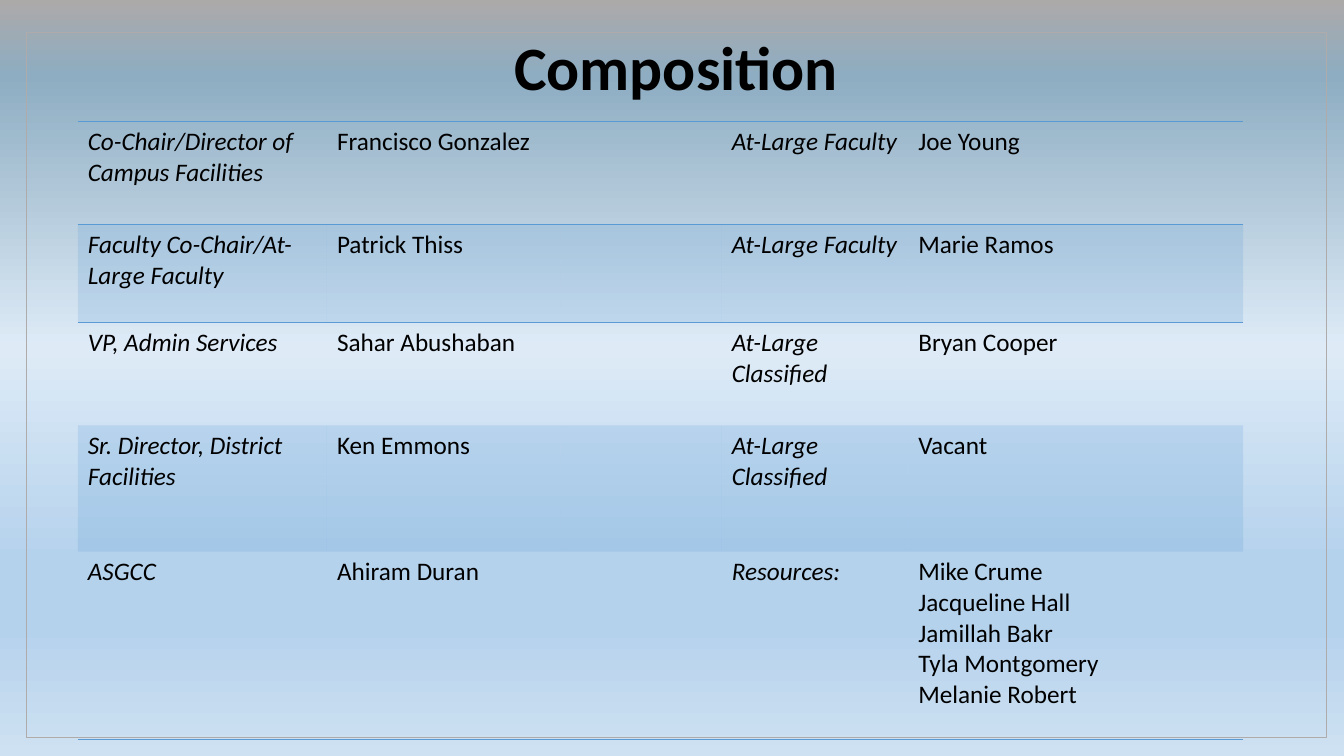
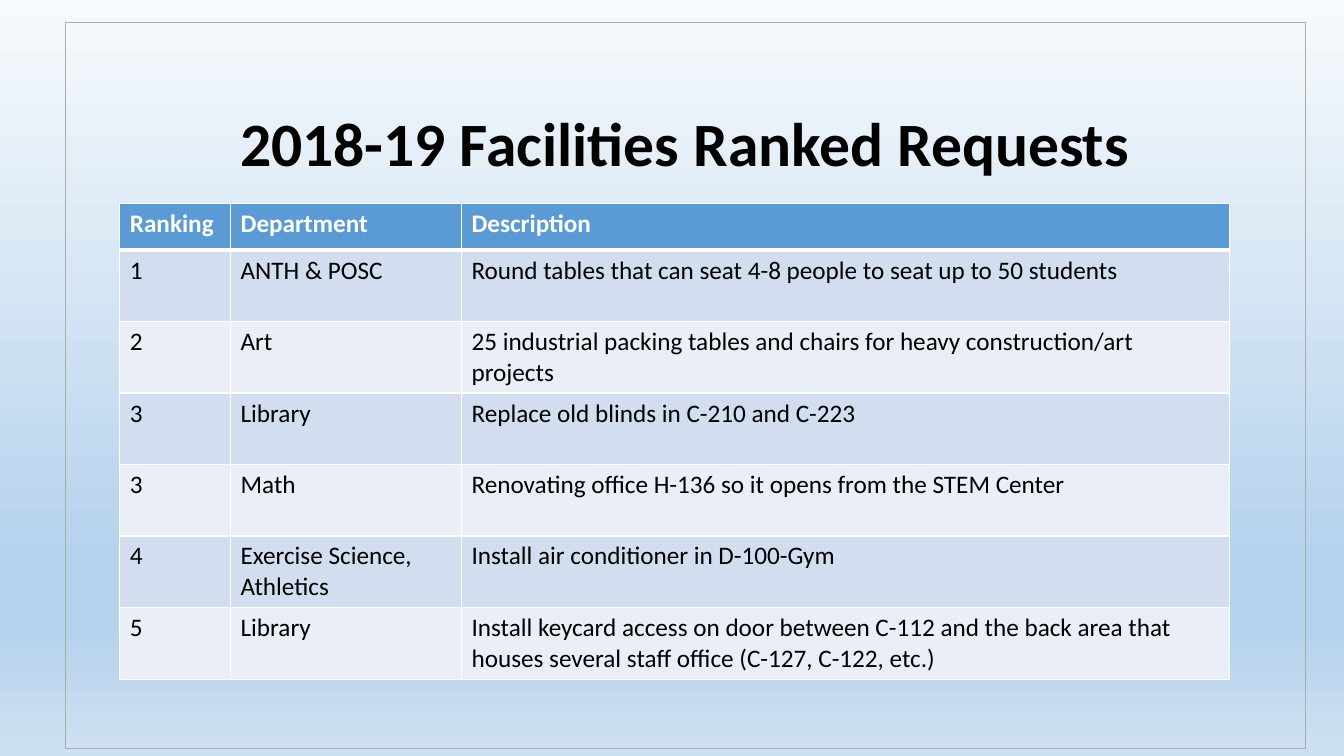
from dataclasses import dataclass

from lxml import etree
from pptx import Presentation
from pptx import util as u
from pptx.dml.color import RGBColor
from pptx.enum import text
from pptx.oxml import ns


@dataclass(frozen=True)
class Theme:
    font: str = "Calibri"
    title_size: int = 44
    body_size: int = 18
    ink: str = "000000"
    white: str = "FFFFFF"
    frame: str = "AFABAB"
    accent: str = "5B9BD5"
    band_dark: str = "D2DEEF"
    band_light: str = "EAEFF7"
    sky: tuple = ((74, "B5D2EC"), (83, "B5D2EC"), (100, "CEE1F2"))
    dusk: tuple = ((0, "ACA9A9"), (10, "8EADC2"), (46, "DEEBF7"))
    dawn: tuple = ((0, "F7FAFD"),)
    no_table_style: str = "{2D5ABB26-0587-4C30-8999-92F81FD0307C}"


THEME = Theme()

MEMBERS = [
    ["Co-Chair/Director of Campus Facilities", "Francisco Gonzalez", "",
     "At-Large Faculty", "Joe Young"],
    ["Faculty Co-Chair/At-Large Faculty", "Patrick Thiss", "",
     "At-Large Faculty", "Marie Ramos"],
    ["VP, Admin Services", "Sahar Abushaban", "",
     "At-Large\nClassified", "Bryan Cooper"],
    ["Sr. Director, District Facilities", "Ken Emmons", "",
     "At-Large\nClassified", "Vacant"],
    ["ASGCC", "Ahiram Duran", "", "Resources:",
     "Mike Crume\nJacqueline Hall\nJamillah Bakr\nTyla Montgomery\nMelanie Robert"],
]

REQUESTS = [
    ["Ranking", "Department", "Description"],
    ["1", "ANTH & POSC",
     "Round tables that can seat 4-8 people to seat up to 50 students"],
    ["2", "Art",
     "25 industrial packing tables and chairs for heavy construction/art projects"],
    ["3", "Library", "Replace old blinds in C-210 and C-223"],
    ["3", "Math", "Renovating office H-136 so it opens from the STEM Center"],
    ["4", "Exercise Science, Athletics", "Install air conditioner in D-100-Gym"],
    ["5", "Library",
     "Install keycard access on door between C-112 and the back area that "
     "houses several staff office (C-127, C-122, etc.)"],
]


def add_xml(parent, tag, **attributes):
    return etree.SubElement(parent, ns.qn(tag), attributes)


class Pages:
    def __init__(self, theme):
        self.theme = theme
        self.deck = Presentation()
        self.deck.slide_width = u.Cm(33.87)
        self.deck.slide_height = u.Cm(19.05)
        self.page = None

    def add_page(self, top_stops):
        self.page = self.deck.slides.add_slide(self.deck.slide_layouts[5])
        fill = self.page.background.fill
        fill.gradient()
        fill.gradient_angle = 270
        stop_list = self.page.element.xpath(".//p:bg//a:gsLst")[0]
        for stop in list(stop_list):
            stop_list.remove(stop)
        for percent, color in top_stops + self.theme.sky:
            stop = add_xml(stop_list, "a:gs", pos=str(percent * 1000))
            add_xml(stop, "a:srgbClr", val=color)

    def style(self, para, size, color, bold=False, italic=False):
        font = para.font
        font.name, font.size = self.theme.font, u.Pt(size)
        font.bold, font.italic = bold, italic
        font.color.rgb = RGBColor.from_string(color)

    def add_title(self, words, left, top, width, height, inset=0.13):
        box = self.page.shapes.title
        box.left, box.top = u.Cm(left), u.Cm(top)
        box.width, box.height = u.Cm(width), u.Cm(height)
        box.line.color.rgb = RGBColor.from_string(self.theme.frame)
        box.line.width = u.Pt(0.75)
        frame = box.text_frame
        frame.text = words
        frame.word_wrap = True
        frame.auto_size = text.MSO_AUTO_SIZE.NONE
        frame.vertical_anchor = text.MSO_ANCHOR.TOP
        frame.margin_top = u.Cm(inset)
        para = frame.paragraphs[0]
        para.alignment = text.PP_ALIGN.CENTER
        para.line_spacing = 0.9
        self.style(para, self.theme.title_size, self.theme.ink, bold=True)

    def add_table(self, rows, left, top, widths, heights):
        frame = self.page.shapes.add_table(
            len(rows), len(widths), u.Cm(left), u.Cm(top),
            u.Cm(sum(widths)), u.Cm(sum(heights)))
        table = frame.table
        table.first_row = table.horz_banding = False
        frame.element.xpath(".//a:tableStyleId")[0].text = self.theme.no_table_style
        for column, width in zip(table.columns, widths):
            column.width = u.Cm(width)
        for row, height, words in zip(table.rows, heights, rows):
            row.height = u.Cm(height)
            for cell, label in zip(row.cells, words):
                cell.text = label
        return table

    def set_borders(self, cell, color, **widths):
        properties = cell._tc.get_or_add_tcPr()
        for side in "LRTB":
            width = widths.get(side, 0)
            if width:
                line = add_xml(properties, f"a:ln{side}", w=str(u.Pt(width)))
                add_xml(add_xml(line, "a:solidFill"), "a:srgbClr", val=color)

    def set_fill(self, cell, color, opacity=100):
        cell.fill.solid()
        cell.fill.fore_color.rgb = RGBColor.from_string(color)
        if opacity < 100:
            tint = cell._tc.tcPr.xpath("./a:solidFill/a:srgbClr")[0]
            add_xml(tint, "a:alpha", val=str(opacity * 1000))

    def add_member_table(self, rows, left, top, widths, heights):
        theme = self.theme
        table = self.add_table(rows, left, top, widths, heights)
        rules = [1, 1, 0, 0, 0, 1]
        for r, row in enumerate(table.rows):
            for c, cell in enumerate(row.cells):
                self.set_borders(cell, theme.accent, T=rules[r], B=rules[r + 1])
                if r % 2:
                    self.set_fill(cell, theme.accent, opacity=20)
                else:
                    cell.fill.background()
                for para in cell.text_frame.paragraphs:
                    self.style(para, theme.body_size, theme.ink, italic=c in (0, 3))

    def add_request_table(self, rows, left, top, widths, heights):
        theme = self.theme
        table = self.add_table(rows, left, top, widths, heights)
        rules = [1, 3] + [1] * (len(rows) - 1)
        for r, row in enumerate(table.rows):
            header = r == 0
            band = theme.band_dark if r % 2 else theme.band_light
            for cell in row.cells:
                self.set_borders(cell, theme.white, L=1, R=1,
                                 T=rules[r], B=rules[r + 1])
                self.set_fill(cell, theme.accent if header else band)
                self.style(cell.text_frame.paragraphs[0], theme.body_size,
                           theme.white if header else theme.ink, bold=header)


def main():
    pages = Pages(THEME)

    pages.add_page(THEME.dusk)
    pages.add_title("Composition", 0.66, 0.81, 32.77, 17.78)
    pages.add_member_table(MEMBERS, 1.96, 3.07,
                           widths=[6.28, 5.89, 4.06, 4.7, 8.44],
                           heights=[2.58, 2.47, 2.6, 3.18, 4.73])

    pages.add_page(THEME.dawn)
    pages.add_title("2018-19 Facilities Ranked Requests",
                    1.65, 0.56, 31.24, 18.31, inset=2.3)
    pages.add_request_table(REQUESTS, 3.02, 5.13,
                            widths=[2.79, 5.82, 19.35],
                            heights=[1.17] + [1.8] * 6)

    pages.deck.save("out.pptx")


if __name__ == "__main__":
    main()
